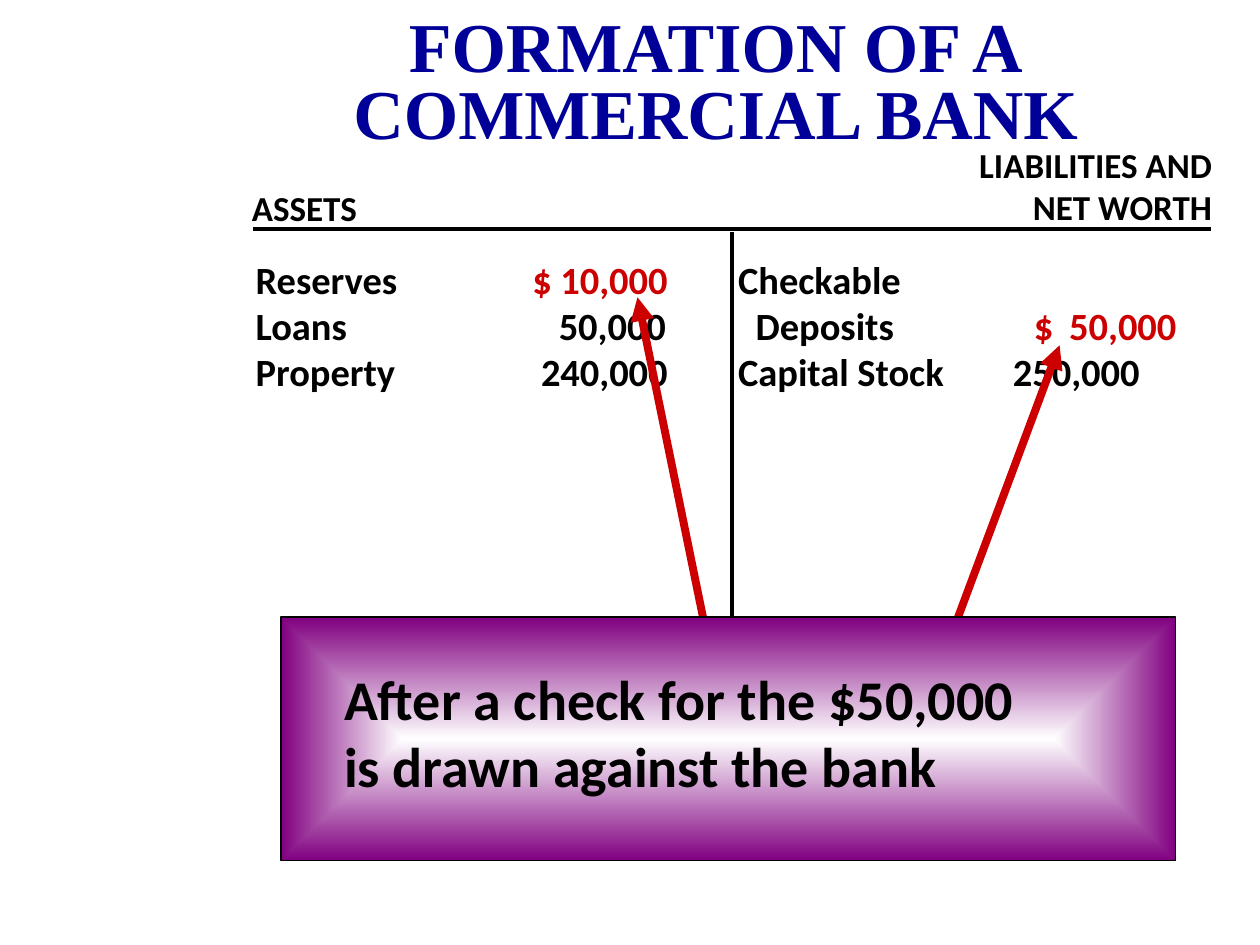
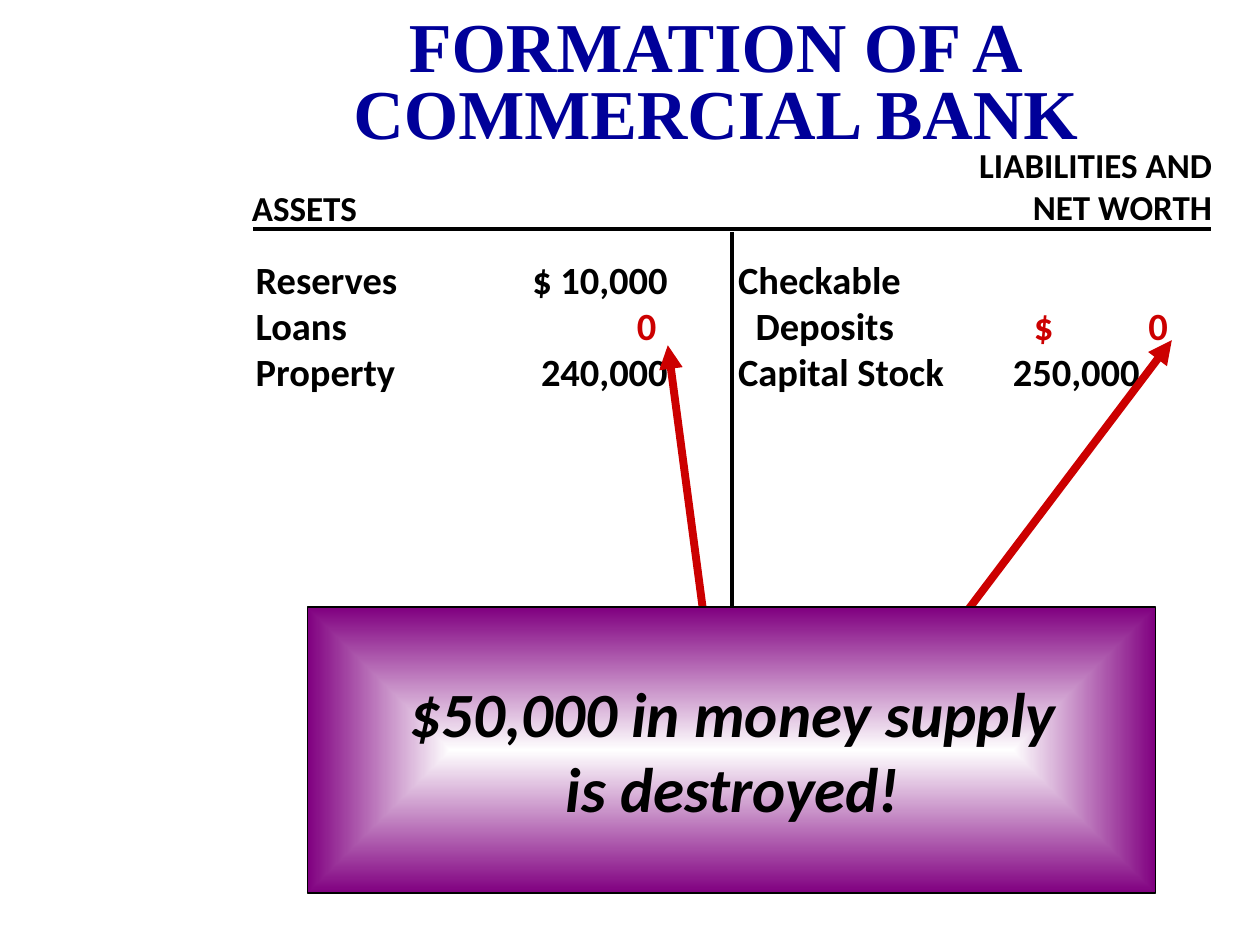
from dataclasses import dataclass

from pptx import Presentation
from pptx.dml.color import RGBColor
from pptx.enum import shapes, text
from pptx.oxml import parse_xml
from pptx.oxml.ns import nsdecls
from pptx.util import Pt


@dataclass(frozen=True)
class Theme:
    ink: str = "000000"
    title: str = "000099"
    accent: str = "CC0000"
    glow: str = "FFFFFF"
    edge: str = "800080"
    serif: str = "Times New Roman"
    sans: str = "Calibri"
    title_size: float = 40
    head_size: float = 20
    entry_size: float = 22
    rule_width: float = 2
    arrow_width: float = 4.5
    border_width: float = 1


T = Theme()
LEFT, CENTER, RIGHT = text.PP_ALIGN.LEFT, text.PP_ALIGN.CENTER, text.PP_ALIGN.RIGHT


@dataclass(frozen=True)
class Box:
    x: float
    y: float
    w: float
    h: float

    def lengths(self) -> list:
        return [Pt(v) for v in (self.x, self.y, self.w, self.h)]


@dataclass(frozen=True)
class Style:
    size: float
    font: str = T.sans
    color: str = T.ink
    align: int = LEFT
    spacing: float = 1.0
    italic: bool = False


@dataclass(frozen=True)
class Line:
    label: str
    amount: str = ""
    tabs: tuple = ()
    changed: bool = False


@dataclass(frozen=True)
class Arrow:
    start: tuple
    end: tuple


@dataclass(frozen=True)
class Callout:
    box: Box
    lines: tuple
    style: Style
    inset_left: float
    inset_top: float


@dataclass(frozen=True)
class Sheet:
    assets: tuple
    liabilities: tuple
    arrows: tuple
    callout: Callout


TITLE = Style(T.title_size, T.serif, T.title, CENTER, 0.8)
HEAD = Style(T.head_size)
HEAD_RIGHT = Style(T.head_size, align=RIGHT)
ENTRY = Style(T.entry_size)

ASSET_EDGE = 235.5
CHECKABLE = Line("Checkable")
CAPITAL = Line("Capital Stock", "\t250,000", (("r", 229.5),))
PROPERTY = Line("Property", "\t240,000", (("r", ASSET_EDGE),))


def reserves(changed: bool) -> Line:
    return Line("Reserves", "\t$ 10,000", (("r", ASSET_EDGE),), changed)


def loans(amount: str, edge: float, changed: bool) -> Line:
    return Line("Loans", f"\t{amount}", (("r", edge),), changed)


def deposits(amount: str, edge: float) -> Line:
    stops = (("l", 10), ("l", 169), ("r", edge))
    return Line("\tDeposits", f"\t$\t{amount}", stops, True)


SHEETS = (
    Sheet(
        (reserves(True), loans("50,000", 234.5, False), PROPERTY),
        (CHECKABLE, deposits("50,000", 250.5), CAPITAL),
        (Arrow((545, 359.3), (605.5, 197.3)), Arrow((403.2, 360), (364.3, 169.9))),
        Callout(Box(160.6, 352.8, 511.2, 139),
                ("After a check for the $50,000", "is drawn against the bank"),
                Style(32), 36, 27),
    ),
    Sheet(
        (reserves(False), loans("0", 229, True), PROPERTY),
        (CHECKABLE, deposits("0", 245.5), CAPITAL),
        (Arrow((545, 359.3), (669.6, 194.4)), Arrow((403.2, 360), (381.6, 197.3))),
        Callout(Box(175.7, 347, 484.6, 163.4),
                ("$50,000 in money supply", "is destroyed!"),
                Style(36, align=CENTER, italic=True), 8.6, 38.2),
    ),
)


def assign(target, values: dict) -> None:
    for name, value in values.items():
        setattr(target, name, value)


def add_run(p, words: str, style: Style, color: str) -> None:
    r = p.add_run()
    r.text = words
    assign(r.font, {"name": style.font, "size": Pt(style.size),
                    "bold": True, "italic": style.italic})
    r.font.color.rgb = RGBColor.from_string(color)


def add_tabs(p, stops: tuple) -> None:
    tabs = "".join(f'<a:tab pos="{Pt(pos)}" algn="{side}"/>' for side, pos in stops)
    p._p.get_or_add_pPr().append(
        parse_xml(f'<a:tabLst {nsdecls("a")}>{tabs}</a:tabLst>'))


def write(tf, lines: tuple, style: Style) -> None:
    assign(tf, {"word_wrap": True, "vertical_anchor": text.MSO_ANCHOR.TOP})
    for i, line in enumerate(lines):
        p = tf.add_paragraph() if i else tf.paragraphs[0]
        assign(p, {"alignment": style.align, "line_spacing": style.spacing})
        if line.tabs:
            add_tabs(p, line.tabs)
        add_run(p, line.label, style, style.color)
        if line.amount:
            add_run(p, line.amount, style, T.accent if line.changed else style.color)


def add_text(s, box: Box, lines: tuple, style: Style) -> None:
    write(s.shapes.add_textbox(*box.lengths()).text_frame, lines, style)


def add_line(s, start: tuple, end: tuple, color: str, width: float,
             arrow: bool = False) -> None:
    sp = s.shapes.add_connector(shapes.MSO_CONNECTOR.STRAIGHT,
                                *[Pt(v) for v in start + end])
    sp.line.color.rgb = RGBColor.from_string(color)
    sp.line.width = Pt(width)
    if arrow:
        sp.line._get_or_add_ln().append(
            parse_xml(f'<a:tailEnd {nsdecls("a")} type="triangle"/>'))
    sp._element.spPr.append(parse_xml(f'<a:effectLst {nsdecls("a")}/>'))


def add_callout(s, c: Callout) -> None:
    sp = s.shapes.add_shape(shapes.MSO_SHAPE.RECTANGLE, *c.box.lengths())
    sp.shadow.inherit = False
    sp.line.color.rgb = RGBColor.from_string(T.ink)
    sp.line.width = Pt(T.border_width)
    sp.fill.gradient()
    old = sp._element.spPr.find(
        "{http://schemas.openxmlformats.org/drawingml/2006/main}gradFill")
    stops = "".join(f'<a:gs pos="{pos}"><a:srgbClr val="{color}"/></a:gs>'
                    for pos, color in ((0, T.glow), (100000, T.edge)))
    sp._element.spPr.replace(old, parse_xml(
        f'<a:gradFill {nsdecls("a")} rotWithShape="1"><a:gsLst>{stops}</a:gsLst>'
        '<a:path path="rect"><a:fillToRect l="50000" t="50000" r="50000" b="50000"/>'
        '</a:path></a:gradFill>'))
    assign(sp.text_frame, {"margin_left": Pt(c.inset_left),
                           "margin_top": Pt(c.inset_top)})
    write(sp.text_frame, tuple(map(Line, c.lines)), c.style)


def add_sheet(prs, sheet: Sheet) -> None:
    s = prs.slides.add_slide(prs.slide_layouts[6])
    add_line(s, (144.7, 131), (691.9, 131), T.ink, T.rule_width)
    add_line(s, (418.3, 132.5), (418.3, 425.5), T.ink, T.rule_width)
    add_text(s, Box(139, 142.6, 262, 86.4), sheet.assets, ENTRY)
    add_text(s, Box(414.7, 142.6, 282.2, 86.4), sheet.liabilities, ENTRY)
    add_text(s, Box(184, 7.2, 450, 83.5),
             (Line("FORMATION OF A"), Line("COMMERCIAL BANK")), TITLE)
    add_text(s, Box(136.8, 103, 94.3, 31), (Line("ASSETS"),), HEAD)
    add_text(s, Box(522, 78.5, 177.8, 54.7),
             (Line("LIABILITIES AND"), Line("NET WORTH")), HEAD_RIGHT)
    for arrow in sheet.arrows:
        add_line(s, arrow.start, arrow.end, T.accent, T.arrow_width, True)
    add_callout(s, sheet.callout)


def main() -> None:
    prs = Presentation()
    assign(prs, {"slide_width": Pt(720), "slide_height": Pt(540)})
    for sheet in SHEETS:
        add_sheet(prs, sheet)
    prs.save("out.pptx")


if __name__ == "__main__":
    main()
